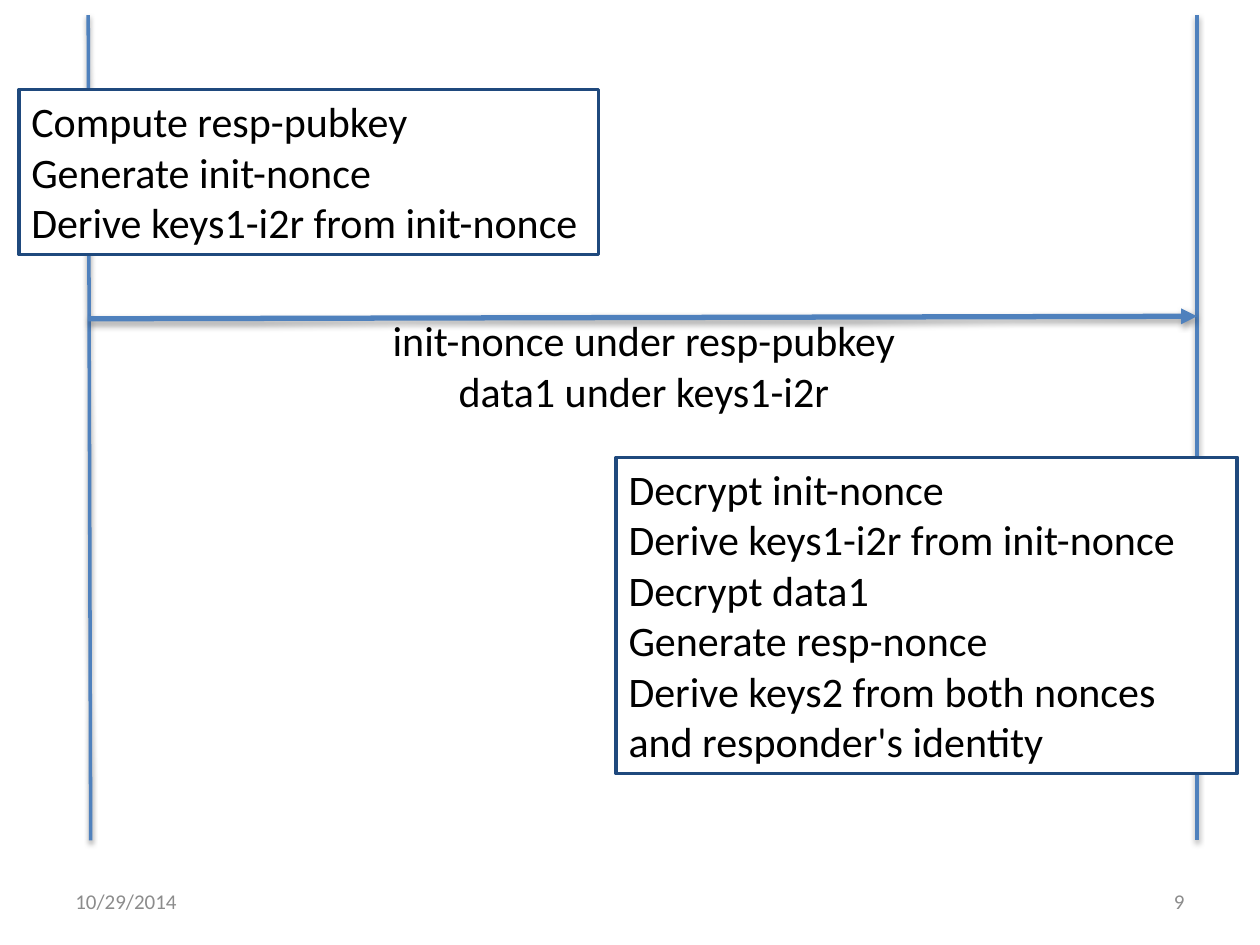
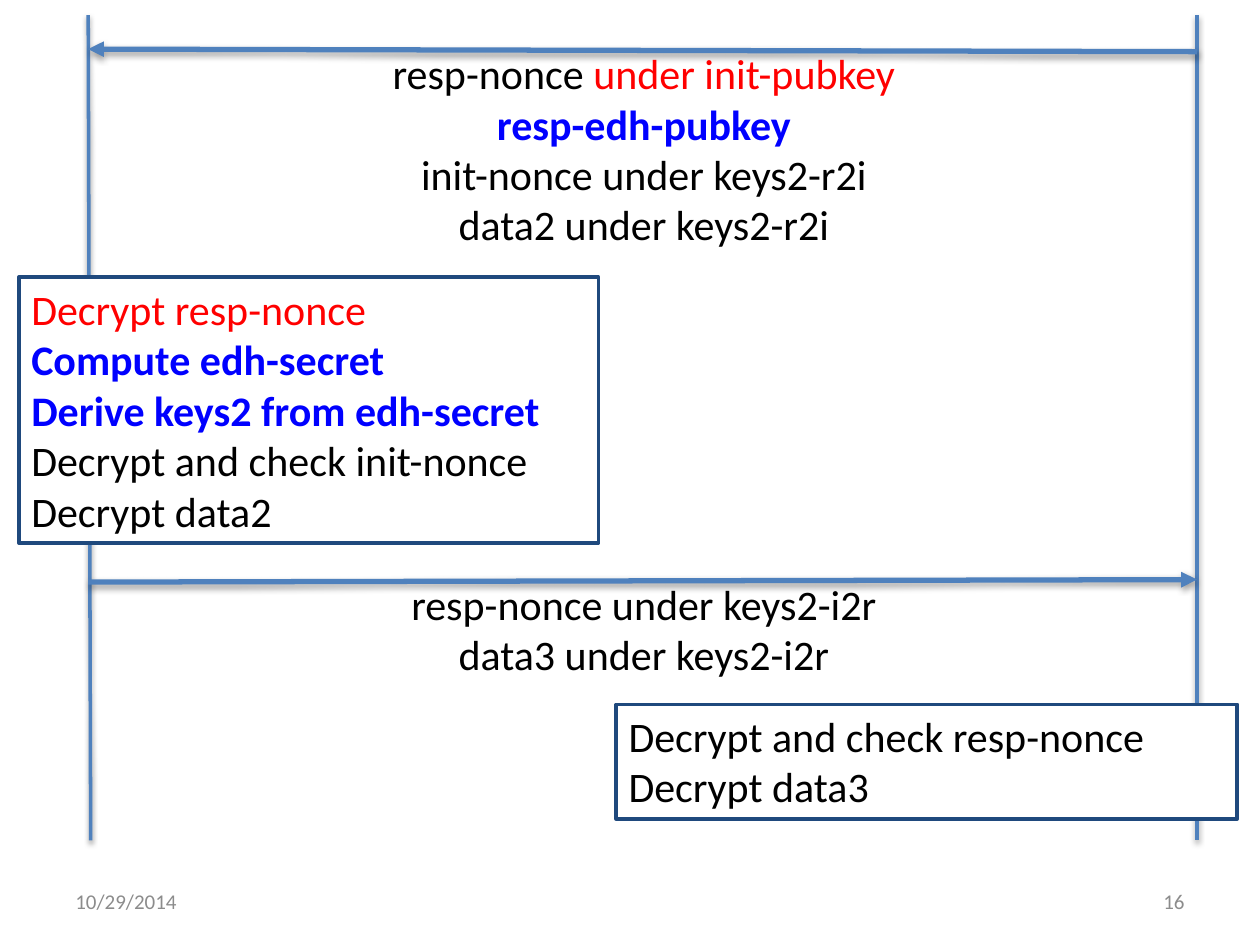
import pptx
import pptx.util
import pptx.dml.color
import pptx.enum.shapes
import pptx.enum.text
import pptx.oxml
import pptx.oxml.ns

Inches, Pt = pptx.util.Inches, pptx.util.Pt
ALIGN = pptx.enum.text.PP_ALIGN
ANCHOR = pptx.enum.text.MSO_ANCHOR
STRAIGHT = pptx.enum.shapes.MSO_CONNECTOR.STRAIGHT
RECTANGLE = pptx.enum.shapes.MSO_SHAPE.RECTANGLE

# Shared look
FONT = "Calibri"
BLACK, RED, BLUE, GREY, WHITE = "000000", "FF0000", "0000FF", "8C8C8C", "FFFFFF"
LINE_BLUE, BORDER_BLUE = "4F81BD", "1F497D"
NAMESPACE = pptx.oxml.ns.nsdecls("a")
SHADOW = (f'<a:effectLst {NAMESPACE}><a:outerShdw blurRad="40000" dist="20000" dir="5400000" '
          'rotWithShape="0"><a:srgbClr val="000000"><a:alpha val="38000"/></a:srgbClr>'
          '</a:outerShdw></a:effectLst>')
ARROWHEAD = f'<a:tailEnd {NAMESPACE} type="triangle"/>'

# Shared grid, in inches
INITIATOR, RESPONDER = 0.7, 9.5
LIFELINE_TOP, LIFELINE_BOTTOM = 0.12, 6.67
SLANT = 0.02
ROW, PADDING = 0.4, 0.11
STEP_COLUMNS = {"initiator": (0.15, 4.6), "responder": (4.89, 4.93)}
FOOTER_TOP, FOOTER_WIDTH, FOOTER_HEIGHT = 6.95, 2.33, 0.4

# A line of text is a string, or a list of (text, colour) runs; blue runs are bold
slides = [
    {
        "number": "9",
        "messages": [
            ("to responder", 2.53, ["init-nonce under resp-pubkey", "data1 under keys1-i2r"]),
        ],
        "steps": [
            ("initiator", 0.71, ["Compute resp-pubkey", "Generate init-nonce",
                                 "Derive keys1-i2r from init-nonce"]),
            ("responder", 3.63, ["Decrypt init-nonce", "Derive keys1-i2r from init-nonce",
                                 "Decrypt data1", "Generate resp-nonce",
                                 "Derive keys2 from both nonces", "and responder's identity"]),
        ],
    },
    {
        "number": "16",
        "messages": [
            ("to initiator", 0.41, [[("resp-nonce ", BLACK), ("under init-pubkey", RED)],
                                    [("resp-edh-pubkey", BLUE)],
                                    "init-nonce under keys2-r2i", "data2 under keys2-r2i"]),
            ("to responder", 4.62, ["resp-nonce under keys2-i2r", "data3 under keys2-i2r"]),
        ],
        "steps": [
            ("initiator", 2.2, [[("Decrypt resp-nonce", RED)], [("Compute edh-secret", BLUE)],
                                [("Derive keys2 from edh-secret", BLUE)],
                                "Decrypt and check init-nonce", "Decrypt data2"]),
            ("responder", 5.59, ["Decrypt and check resp-nonce", "Decrypt data3"]),
        ],
    },
]


def color(hex_string):
    return pptx.dml.color.RGBColor.from_string(hex_string)


def write_lines(shape, lines, alignment=ALIGN.LEFT, size=24, anchor=ANCHOR.TOP):
    text_frame = shape.text_frame
    text_frame.word_wrap = True
    text_frame.vertical_anchor = anchor
    for index, line in enumerate(lines):
        paragraph = text_frame.add_paragraph() if index else text_frame.paragraphs[0]
        paragraph.alignment = alignment
        for text, run_color in [(line, BLACK)] if isinstance(line, str) else line:
            run = paragraph.add_run()
            run.text = text
            run.font.name = FONT
            run.font.size = Pt(size)
            run.font.bold = run_color == BLUE
            run.font.color.rgb = color(run_color)


presentation = pptx.Presentation()
presentation.slide_width, presentation.slide_height = Inches(10), Inches(7.5)

for content in slides:
    slide = presentation.slides.add_slide(presentation.slide_layouts[6])
    connectors = []

    # Lifelines of the two parties
    for x, slant in ((INITIATOR, SLANT), (RESPONDER, 0)):
        lifeline = slide.shapes.add_connector(STRAIGHT, Inches(x), Inches(LIFELINE_TOP),
                                              Inches(x + slant), Inches(LIFELINE_BOTTOM))
        connectors.append((lifeline, 2))

    # Messages: an arrow grouped with the text under it
    for direction, top, lines in content["messages"]:
        start, end = INITIATOR, RESPONDER
        if direction == "to initiator":
            start, end = end, start
        group = slide.shapes.add_group_shape()
        arrow = group.shapes.add_connector(STRAIGHT, Inches(start), Inches(top),
                                           Inches(end), Inches(top - SLANT))
        connectors.append((arrow, 3))
        label = group.shapes.add_textbox(
            Inches(INITIATOR + SLANT), Inches(top - 0.08),
            Inches(RESPONDER - INITIATOR - SLANT), Inches(PADDING + ROW * len(lines)))
        write_lines(label, lines, ALIGN.CENTER)

    # Line style, with heads on the arrows only
    for connector, width in connectors:
        connector.line.color.rgb = color(LINE_BLUE)
        connector.line.width = Pt(width)
        if width == 3:
            connector.line._get_or_add_ln().append(pptx.oxml.parse_xml(ARROWHEAD))
        connector._element.spPr.append(pptx.oxml.parse_xml(SHADOW))

    # Steps each party carries out
    for party, top, lines in content["steps"]:
        left, width = STEP_COLUMNS[party]
        step = slide.shapes.add_shape(RECTANGLE, Inches(left), Inches(top), Inches(width),
                                      Inches(PADDING + ROW * len(lines)))
        step.shadow.inherit = False
        step.fill.solid()
        step.fill.fore_color.rgb = color(WHITE)
        step.line.color.rgb = color(BORDER_BLUE)
        step.line.width = Pt(2)
        write_lines(step, lines)

    # Footer: date and slide number
    for left, text, alignment in ((0.5, "10/29/2014", ALIGN.LEFT),
                                  (RESPONDER - FOOTER_WIDTH, content["number"], ALIGN.RIGHT)):
        footer = slide.shapes.add_textbox(Inches(left), Inches(FOOTER_TOP),
                                          Inches(FOOTER_WIDTH), Inches(FOOTER_HEIGHT))
        write_lines(footer, [[(text, GREY)]], alignment, 12, ANCHOR.MIDDLE)

presentation.save("out.pptx")
